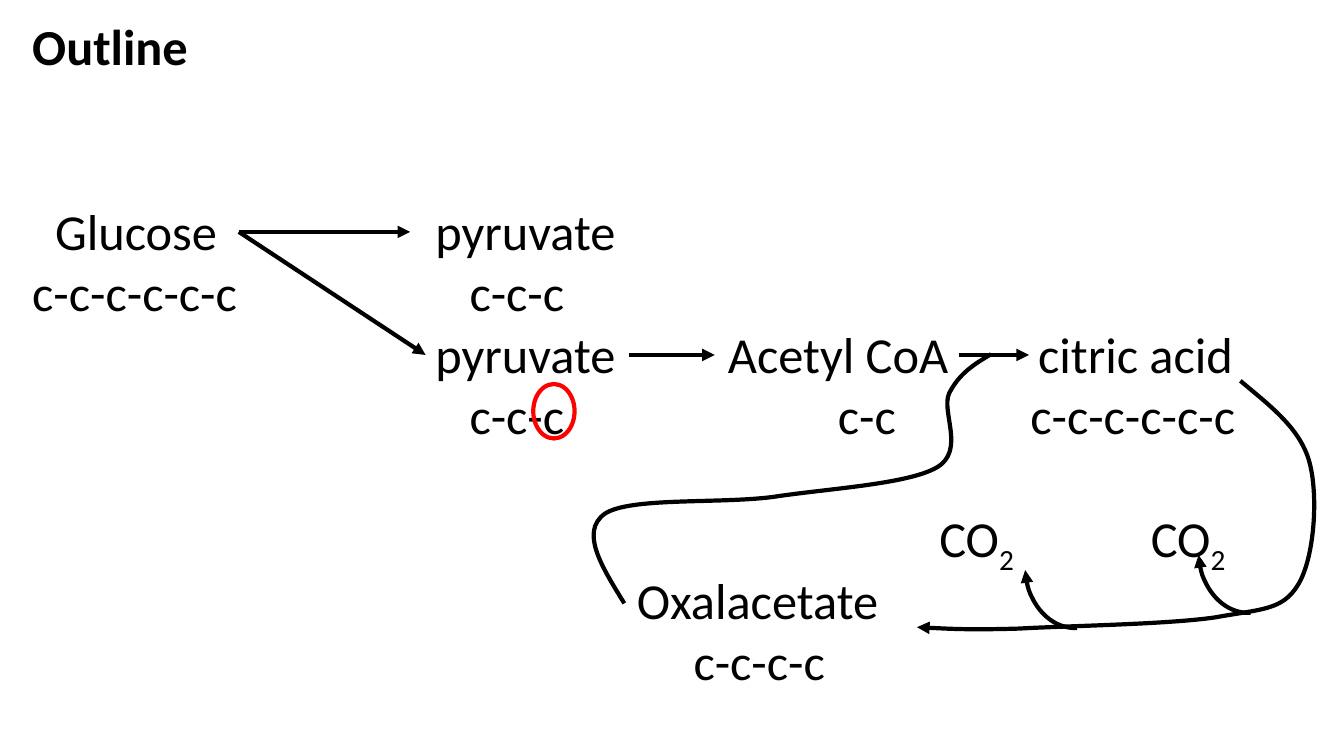
from dataclasses import dataclass
from lxml.etree import SubElement
from pptx import Presentation
from pptx.dml.color import RGBColor as Color
from pptx.enum.shapes import MSO_CONNECTOR as Link, MSO_SHAPE as Preset
from pptx.enum.text import MSO_ANCHOR as Anchor, MSO_AUTO_SIZE as Fit, PP_ALIGN as Align
from pptx.oxml.ns import qn
from pptx.util import Pt


@dataclass
class Theme:
    """Fonts, sizes and colours of the slide."""
    font: str = "Calibri"
    size: float = 36
    stroke: float = 3
    ink: Color = Color(0, 0, 0)
    mark: Color = Color(255, 0, 0)


THEME = Theme()
TITLE = "Outline"
FIRST_TOP, ROW_PITCH, BOX_HEIGHT = 10.8, 43.95, 46

# name: (text, subscript, row, box left, text left, box right)
LABELS = {
    "glucose": ("Glucose", "", 3, 23, 39.3, 170.6),
    "glucose carbons": ("c-c-c-c-c-c", "", 4, 23, 23, 180),
    "upper pyruvate": ("pyruvate", "", 3, 293, 311, 449),
    "upper carbons": ("c-c-c", "", 4, 335.4, 335.4, 415),
    "lower pyruvate": ("pyruvate", "", 5, 304, 311, 449.3),
    "lower carbons": ("c-c-c", "", 6, 335.4, 335.4, 415),
    "acetyl": ("Acetyl CoA", "", 5, 510.5, 520, 684.7),
    "acetyl carbons": ("c-c", "", 6, 598.5, 598.5, 650),
    "citric acid": ("citric acid", "", 5, 735.1, 741.5, 892),
    "citric carbons": ("c-c-c-c-c-c", "", 6, 736, 736, 894),
    "first gas": ("CO", "2", 8, 671, 671, 740),
    "second gas": ("CO", "2", 8, 822, 822, 892),
    "oxalacetate": ("Oxalacetate", "", 9, 455, 455, 640),
    "oxalacetate carbons": ("c-c-c-c", "", 10, 495.4, 495.4, 605),
}
STEPS = [
    ("glucose", "upper pyruvate"),
    ("glucose", "lower pyruvate"),
    ("lower pyruvate", "acetyl"),
    ("acetyl", "citric acid"),
]
RETURN_CURVE = [
    (885.6, 272.2), (906.5, 288.7), (928.1, 304.6), (934.6, 329), (941.8, 352.8),
    (938.9, 398.9), (927.4, 417.6), (915.8, 436.3), (900.7, 434.9), (867.6, 440.6),
    (833.8, 445.7), (763.2, 447.1), (727.9, 448.6), (692.6, 450), (673.9, 448.6),
    (655.2, 447.8),
]
ENTRY_CURVE = [
    (445.7, 431.3), (429.8, 405.4), (414, 380.2), (432, 367.2), (450, 355),
    (512.6, 360), (552.2, 355), (591.1, 349.2), (648, 346.3), (668.9, 334.1),
    (689.8, 321.8), (671.8, 294.5), (678.2, 280.8), (684.7, 267.1), (696.2, 259.9),
    (707.8, 252.7),
]
GAS_ARCS = [(856.1, 351.4), (732.2, 362.2)]
ARC_SIZE, ARC_TURN = (69.8, 86.4), 177
LOST_CARBON = (380.9, 274.3, 29.5, 38.9)


def style_text(frame, left_inset=0, bold=False):
    frame.word_wrap = True
    frame.auto_size = Fit.NONE
    frame.vertical_anchor = Anchor.TOP
    frame.margin_left = Pt(left_inset)
    frame.margin_right = frame.margin_top = frame.margin_bottom = Pt(0)
    for para in frame.paragraphs:
        para.alignment = Align.LEFT
        for span in para.runs:
            span.font.name, span.font.size = THEME.font, Pt(THEME.size)
            span.font.bold, span.font.color.rgb = bold, THEME.ink


def style_line(shape, color=THEME.ink, arrow=False):
    shape.line.color.rgb = color
    shape.line.width = Pt(THEME.stroke)
    if arrow:
        SubElement(shape.line._get_or_add_ln(), qn("a:tailEnd"), type="triangle")


def row_top(row):
    return FIRST_TOP + row * ROW_PITCH


def add_title(page):
    title = page.shapes.title
    title.left, title.top, title.width, title.height = Pt(23), Pt(row_top(0)), Pt(400), Pt(BOX_HEIGHT)
    title.text_frame.text = TITLE
    style_text(title.text_frame, bold=True)


def add_label(page, text, subscript, row, left, text_left, right):
    box = page.shapes.add_textbox(Pt(left), Pt(row_top(row)), Pt(right - left), Pt(BOX_HEIGHT))
    para = box.text_frame.paragraphs[0]
    para.text = text
    if subscript:
        span = para.add_run()
        span.text = subscript
        span._r.get_or_add_rPr().set("baseline", "-25000")
    style_text(box.text_frame, text_left - left)
    return box


def add_step(page, start, end):
    step = page.shapes.add_connector(Link.STRAIGHT, 0, 0, 0, 0)
    step.begin_connect(start, 3)
    step.end_connect(end, 1)
    style_line(step, arrow=True)
    SubElement(step._element.spPr, qn("a:effectLst"))


def add_curve(shapes, points, arrow=False):
    """Draw a chain of cubic curves: a start, then two handles and an end for each."""
    builder = shapes.build_freeform(*points[0], scale=Pt(1))
    builder.add_line_segments(points[1:], close=False)
    curve = builder.convert_to_shape()
    outline = curve._element.find(".//" + qn("a:path"))
    legs = outline.findall(qn("a:lnTo"))
    for first in range(0, len(legs), 3):
        cubic = SubElement(outline, qn("a:cubicBezTo"))
        for leg in legs[first:first + 3]:
            cubic.append(leg[0])
            outline.remove(leg)
    curve.fill.background()
    curve.shadow.inherit = False
    style_line(curve, arrow=arrow)


def add_preset(shapes, kind, left, top, width, height, color=THEME.ink, turn=0, arrow=False):
    shape = shapes.add_shape(kind, Pt(left), Pt(top), Pt(width), Pt(height))
    shape.rotation = turn
    shape.fill.background()
    shape.shadow.inherit = False
    style_line(shape, color, arrow)


def main():
    deck = Presentation()
    deck.slide_width, deck.slide_height = Pt(960), Pt(540)
    page = deck.slides.add_slide(deck.slide_layouts[5])
    add_title(page)
    boxes = {name: add_label(page, *label) for name, label in LABELS.items()}
    for start, end in STEPS:
        add_step(page, boxes[start], boxes[end])
    cycle = page.shapes.add_group_shape()
    add_curve(cycle.shapes, RETURN_CURVE, arrow=True)
    for left, top in GAS_ARCS:
        add_preset(cycle.shapes, Preset.ARC, left, top, *ARC_SIZE, turn=ARC_TURN, arrow=True)
    add_curve(page.shapes, ENTRY_CURVE)
    add_preset(page.shapes, Preset.OVAL, *LOST_CARBON, color=THEME.mark)
    deck.save("out.pptx")


if __name__ == "__main__":
    main()
